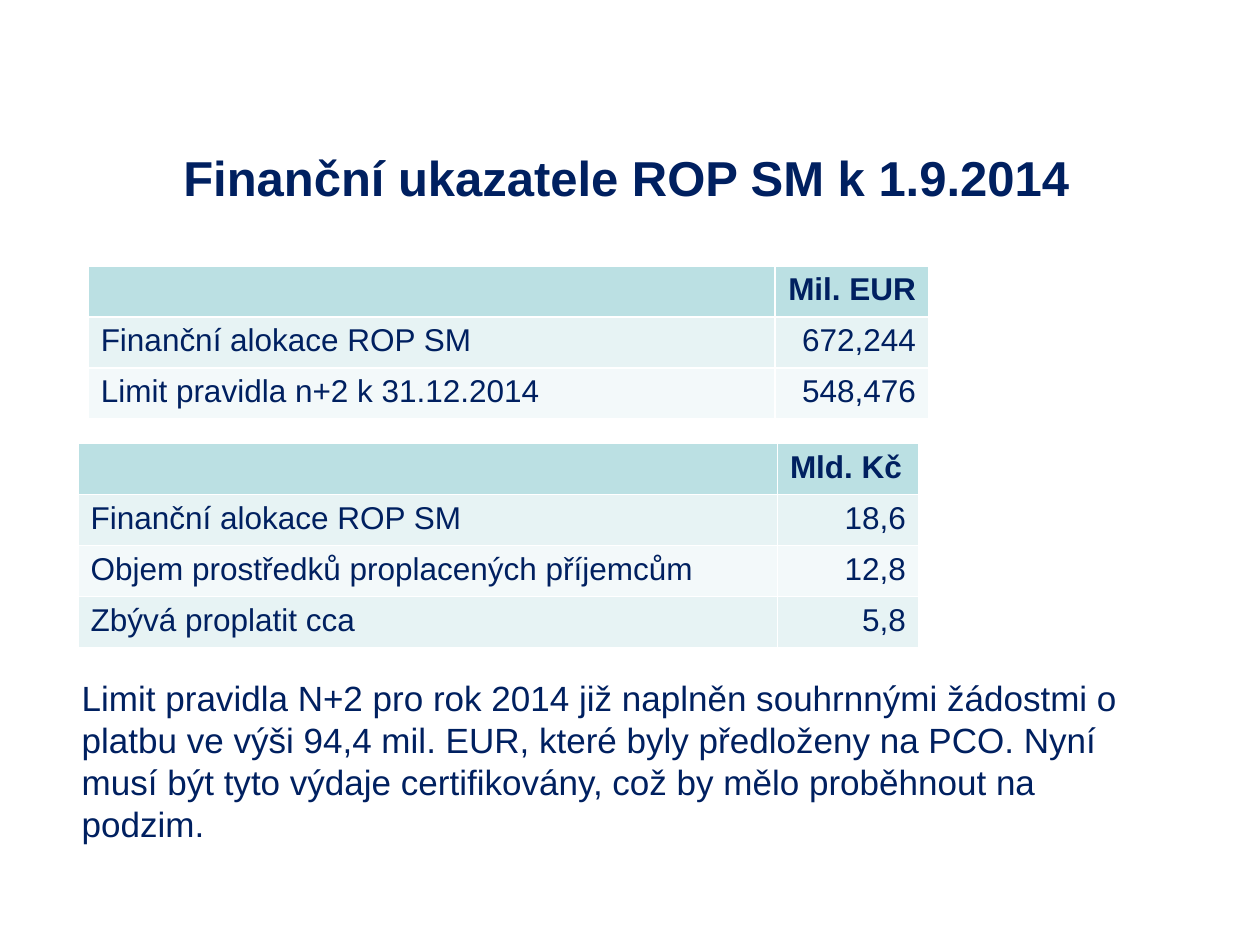
from pptx import Presentation
from pptx.dml.color import RGBColor as Color
from pptx.enum.text import MSO_ANCHOR as Anchor, PP_ALIGN as Align
from pptx.util import Inches, Pt

COLORS = {"text": "002060", "header": "BBE0E3", "odd": "E7F3F4", "even": "F3F9FA"}
ROW = Inches(0.405)
TABLE_WIDTH = Inches(6.67)


def style(para, size, bold=False, align=Align.LEFT):
    para.alignment = align
    para.font.name = "Arial"
    para.font.size = Pt(size)
    para.font.bold = bold
    para.font.color.rgb = Color.from_string(COLORS["text"])


deck = Presentation()
deck.slide_width, deck.slide_height = Inches(10), Inches(7.5)
page = deck.slides.add_slide(deck.slide_layouts[5])

title = page.shapes.title
title.left, title.top = Inches(0.47), Inches(0.78)
title.width, title.height = Inches(9), Inches(1.25)
title.text_frame.text = "Finanční ukazatele ROP SM k 1.9.2014"
title.text_frame.vertical_anchor = Anchor.MIDDLE
style(title.text_frame.paragraphs[0], 28, True, Align.CENTER)

tables = [
    (0.7, 2.11, 1.22, Align.RIGHT, [
        ("", "Mil. EUR"),
        ("Finanční alokace ROP SM", "672,244"),
        ("Limit pravidla n+2 k 31.12.2014", "548,476"),
    ]),
    (0.62, 3.52, 1.12, Align.LEFT, [
        ("", "Mld. Kč"),
        ("Finanční alokace ROP SM", "18,6"),
        ("Objem prostředků proplacených příjemcům", "12,8"),
        ("Zbývá proplatit cca", "5,8"),
    ]),
]
for left, top, value_width, header_align, rows in tables:
    table = page.shapes.add_table(
        len(rows), 2, Inches(left), Inches(top), TABLE_WIDTH, ROW * len(rows)
    ).table
    table.columns[0].width = TABLE_WIDTH - Inches(value_width)
    table.columns[1].width = Inches(value_width)
    for r, texts in enumerate(rows):
        band = "header" if r == 0 else "odd" if r % 2 else "even"
        for c, text in enumerate(texts):
            cell = table.cell(r, c)
            cell.fill.solid()
            cell.fill.fore_color.rgb = Color.from_string(COLORS[band])
            cell.text = text
            value_align = header_align if r == 0 else Align.RIGHT
            style(cell.text_frame.paragraphs[0], 18, r == 0, value_align if c else Align.LEFT)

box = page.shapes.add_textbox(Inches(0.55), Inches(5.32), Inches(8.52), Inches(1.41))
box.text_frame.word_wrap = True
box.text_frame.text = (
    "Limit pravidla N+2 pro rok 2014 již naplněn souhrnnými žádostmi o platbu "
    "ve výši 94,4 mil. EUR, které byly předloženy na PCO. Nyní musí být tyto "
    "výdaje certifikovány, což by mělo proběhnout na podzim."
)
style(box.text_frame.paragraphs[0], 20)

deck.save("out.pptx")
